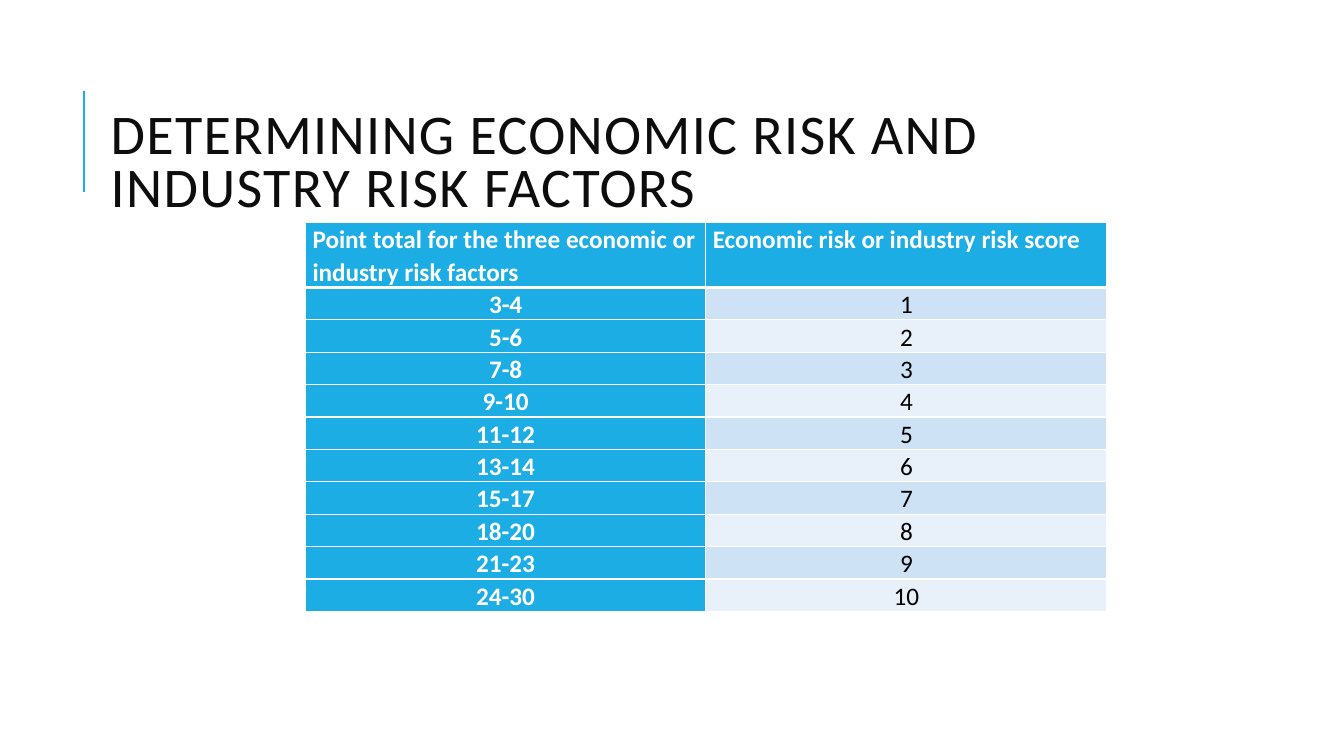
"""Build the slide on economic risk and industry risk factors."""
import dataclasses

import lxml.etree
import pptx
import pptx.dml.color
import pptx.enum.shapes
import pptx.enum.text
import pptx.oxml.ns
import pptx.util

EMU_PER_PX = 9144
FONT = "Calibri"
COLORS = {
    "accent": "1CADE4",
    "title": "0D0D0D",
    "white": "FFFFFF",
    "black": "000000",
    "band_dark": "CDE3F5",
    "band_light": "E8F1FA",
}
TITLE = "DETERMINING ECONOMIC RISK AND INDUSTRY RISK FACTORS"
HEADERS = (
    "Point total for the three economic or industry risk factors",
    "Economic risk or industry risk score",
)
POINT_TOTALS = (
    "3-4", "5-6", "7-8", "9-10", "11-12",
    "13-14", "15-17", "18-20", "21-23", "24-30",
)
COLUMN_WIDTHS = (397, 398)
HEADER_HEIGHT, ROW_HEIGHT, TABLE_HEIGHT = 48, 23, 417


@dataclasses.dataclass(frozen=True)
class CellStyle:
    fill: str
    color: str
    bold: bool
    align: pptx.enum.text.PP_ALIGN


LEFT, CENTER = pptx.enum.text.PP_ALIGN.LEFT, pptx.enum.text.PP_ALIGN.CENTER
HEADER = CellStyle("accent", "white", True, LEFT)
TOTAL = CellStyle("accent", "white", True, CENTER)
SCORES = (
    CellStyle("band_dark", "black", False, CENTER),
    CellStyle("band_light", "black", False, CENTER),
)


def px(n: int) -> pptx.util.Emu:
    return pptx.util.Emu(n * EMU_PER_PX)


def rgb(name: str) -> pptx.dml.color.RGBColor:
    return pptx.dml.color.RGBColor.from_string(COLORS[name])


def format_text(tf, size: int, color: str, bold: bool, spacing: float) -> None:
    p = tf.paragraphs[0]
    p.line_spacing = spacing
    font = p.runs[0].font
    font.name = FONT
    font.size = pptx.util.Pt(size)
    font.bold = bold
    font.color.rgb = rgb(color)


def add_accent_line(s) -> None:
    line = s.shapes.add_connector(
        pptx.enum.shapes.MSO_CONNECTOR.STRAIGHT, px(83), px(190), px(83), px(90)
    )
    line.line.color.rgb = rgb("accent")
    line.line.width = pptx.util.Pt(1.5)
    lxml.etree.SubElement(
        line._element.spPr, pptx.oxml.ns.qn("a:effectLst")
    )


def add_title(s) -> None:
    tf = s.shapes.add_textbox(px(100), px(68), px(1133), px(191)).text_frame
    tf.word_wrap = True
    tf.vertical_anchor = pptx.enum.text.MSO_ANCHOR.MIDDLE
    tf.text = TITLE
    format_text(tf, 40, "title", False, 0.8)
    tf.paragraphs[0].runs[0]._r.get_or_add_rPr().set("spc", "100")


def set_borders(cell, top: int, bottom: int) -> None:
    tcPr = cell._tc.get_or_add_tcPr()
    widths = {"lnL": 1, "lnR": 1, "lnT": top, "lnB": bottom}
    for i, (side, width) in enumerate(widths.items()):
        ln = lxml.etree.Element(
            pptx.oxml.ns.qn(f"a:{side}"), w=str(pptx.util.Pt(width))
        )
        fill = lxml.etree.SubElement(ln, pptx.oxml.ns.qn("a:solidFill"))
        lxml.etree.SubElement(
            fill, pptx.oxml.ns.qn("a:srgbClr"), val=COLORS["white"]
        )
        tcPr.insert(i, ln)


def fill_cell(cell, text: str, style: CellStyle, row: int) -> None:
    cell.margin_left = cell.margin_right = px(7)
    cell.margin_top = cell.margin_bottom = 0
    cell.fill.solid()
    cell.fill.fore_color.rgb = rgb(style.fill)
    set_borders(cell, 3 if row == 1 else 1, 3 if row == 0 else 1)
    cell.text_frame.text = text
    cell.text_frame.paragraphs[0].alignment = style.align
    format_text(cell.text_frame, 18, style.color, style.bold, 1.07)


def add_score_table(s) -> None:
    frame = s.shapes.add_table(
        len(POINT_TOTALS) + 1, len(HEADERS),
        px(303), px(221), px(sum(COLUMN_WIDTHS)), px(TABLE_HEIGHT),
    )
    table = frame.table
    for column, width in zip(table.columns, COLUMN_WIDTHS):
        column.width = px(width)
    for i, row in enumerate(table.rows):
        row.height = px(ROW_HEIGHT if i else HEADER_HEIGHT)
    frame.height = px(TABLE_HEIGHT)
    for col, text in enumerate(HEADERS):
        fill_cell(table.cell(0, col), text, HEADER, 0)
    for score, total in enumerate(POINT_TOTALS, start=1):
        fill_cell(table.cell(score, 0), total, TOTAL, score)
        fill_cell(
            table.cell(score, 1), str(score), SCORES[(score - 1) % 2], score
        )


def main() -> None:
    prs = pptx.Presentation()
    prs.slide_width, prs.slide_height = px(1333), px(750)
    s = prs.slides.add_slide(prs.slide_layouts[6])
    add_accent_line(s)
    add_title(s)
    add_score_table(s)
    prs.save("out.pptx")


if __name__ == "__main__":
    main()
